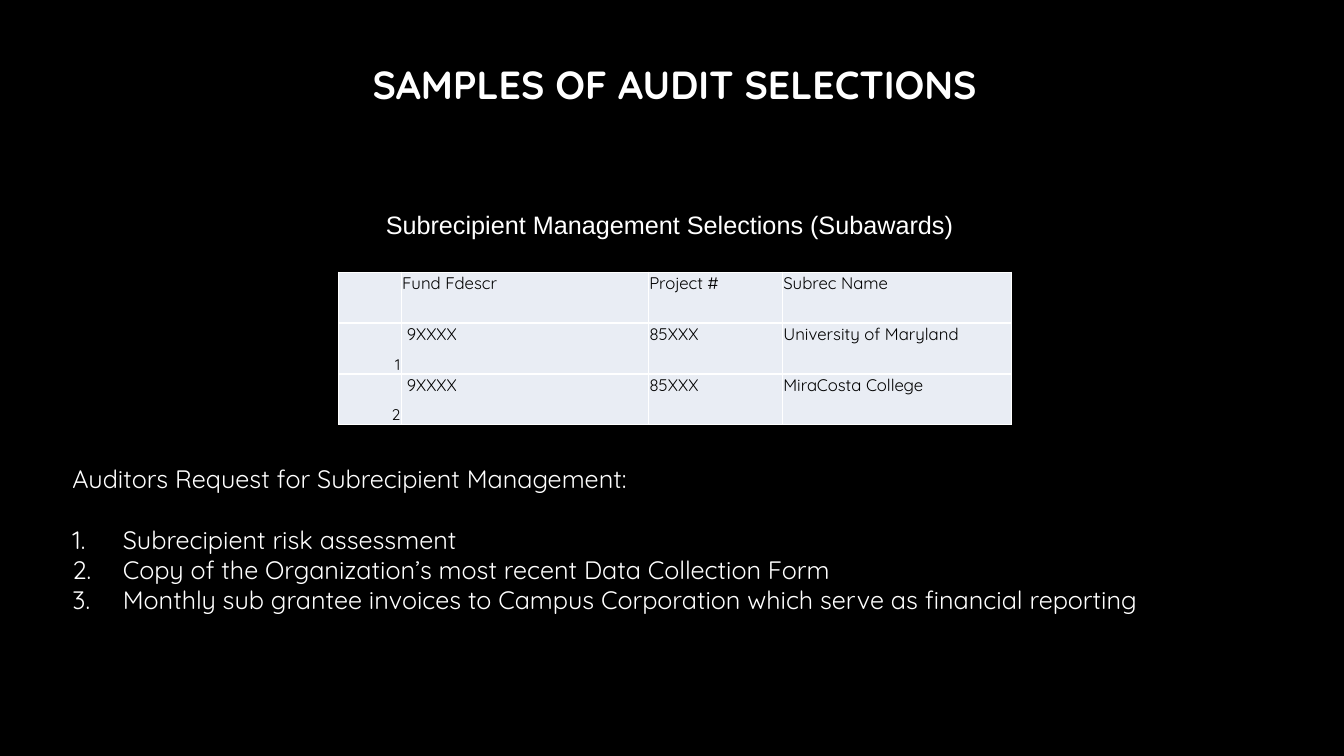
"""Build the slide of audit selections for subrecipient management."""
from dataclasses import dataclass

from lxml import etree
from pptx import Presentation
from pptx.dml.color import RGBColor
from pptx.enum.text import MSO_ANCHOR, PP_ALIGN
from pptx.oxml.ns import qn
from pptx.slide import Slide
from pptx.table import _Cell
from pptx.text.text import _Paragraph
from pptx.util import Inches, Pt

LEFT, CENTER, RIGHT = PP_ALIGN.LEFT, PP_ALIGN.CENTER, PP_ALIGN.RIGHT
TOP, BOTTOM = MSO_ANCHOR.TOP, MSO_ANCHOR.BOTTOM
COLORS = {"page": "000000", "light": "FFFFFF", "cell": "E9EDF4", "dark": "000000"}
FONT = "Quicksand"


@dataclass
class TextBlock:
    """A text box; lines after the first are numbered."""
    left: float
    top: float
    width: float
    height: float
    lines: list[str]
    size: int = 18
    font: str = FONT
    bold: bool = False
    align: PP_ALIGN = LEFT


TITLE = TextBlock(2.14, 0.55, 9.1, 0.88, ["SAMPLES OF AUDIT SELECTIONS"],
                  size=28, bold=True, align=CENTER)
SUBTITLE = TextBlock(0, 2.03, 13.28, 0.39,
                     ["Subrecipient Management Selections (Subawards)"],
                     font="Arial", align=CENTER)
REQUESTS = TextBlock(0.62, 4.55, 12.51, 2.36, [
    "Auditors Request for Subrecipient Management:",
    "Subrecipient risk assessment",
    "Copy of the Organization’s most recent Data Collection Form",
    "Monthly sub grantee invoices to Campus Corporation which serve as financial reporting",
])

COLUMN_WIDTHS = [0.62, 2.45, 1.33, 2.27]
ROW_HEIGHT = 0.505
ROWS = [
    ["", "Fund Fdescr", "Project #", "Subrec Name"],
    ["1", " 9XXXX", "85XXX", "University of Maryland"],
    ["2", " 9XXXX", "85XXX", "MiraCosta College"],
]


def rgb(name: str) -> RGBColor:
    """Return a named colour."""
    return RGBColor.from_string(COLORS[name])


def style(para: _Paragraph, size: int, color: str, font: str = FONT,
          bold: bool = False) -> None:
    """Format every run of a paragraph."""
    for span in para.runs:
        span.font.size = Pt(size)
        span.font.name = font
        span.font.bold = bold
        span.font.color.rgb = rgb(color)


def number(para: _Paragraph) -> None:
    """Give a paragraph a hanging automatic number."""
    props = para._p.get_or_add_pPr()
    props.set("marL", str(Inches(0.5)))
    props.set("indent", str(Inches(-0.5)))
    etree.SubElement(props, qn("a:buFont"), typeface="+mj-lt")
    etree.SubElement(props, qn("a:buAutoNum"), type="arabicPeriod")


def add_text(page: Slide, block: TextBlock) -> _Paragraph:
    """Draw a text block and return its first paragraph."""
    box = page.shapes.add_textbox(Inches(block.left), Inches(block.top),
                                  Inches(block.width), Inches(block.height))
    frame = box.text_frame
    frame.word_wrap = True
    frame.text = "\n".join(block.lines)
    for index, para in enumerate(frame.paragraphs):
        if index:
            number(para)
        if index == 1:
            para.space_before = Pt(21.5)
        para.alignment = block.align
        style(para, block.size, "light", block.font, block.bold)
    return frame.paragraphs[0]


def add_glow_shadow(para: _Paragraph) -> None:
    """Put a soft grey shadow behind the letters of a paragraph."""
    props = para.runs[0].font._element
    effects = etree.Element(qn("a:effectLst"))
    shadow = etree.SubElement(effects, qn("a:outerShdw"), blurRad="38100",
                              dist="38100", dir="2700000", algn="tl")
    color = etree.SubElement(shadow, qn("a:srgbClr"), val="808080")
    etree.SubElement(color, qn("a:alpha"), val="43000")
    props.find(qn("a:solidFill")).addnext(effects)


def add_borders(cell: _Cell) -> None:
    """Draw thin white lines around a cell."""
    props = cell._tc.get_or_add_tcPr()
    for index, side in enumerate(("lnL", "lnR", "lnT", "lnB")):
        line = etree.Element(qn(f"a:{side}"), w=str(Pt(1)))
        fill = etree.SubElement(line, qn("a:solidFill"))
        etree.SubElement(fill, qn("a:srgbClr"), val=COLORS["light"])
        props.insert(index, line)


def add_selections(page: Slide) -> None:
    """Draw the table of selected subawards."""
    table = page.shapes.add_table(
        len(ROWS), len(COLUMN_WIDTHS), Inches(3.36), Inches(2.7),
        Inches(sum(COLUMN_WIDTHS)), Inches(ROW_HEIGHT * len(ROWS))).table
    table.first_row = table.horz_banding = False
    for column, width in zip(table.columns, COLUMN_WIDTHS):
        column.width = Inches(width)
    for row, texts in zip(table.rows, ROWS):
        row.height = Inches(ROW_HEIGHT)
        for index, (cell, text) in enumerate(zip(row.cells, texts)):
            is_number = index == 0
            cell.text = text
            cell.margin_left = cell.margin_right = cell.margin_top = Inches(0.01)
            cell.margin_bottom = 0
            cell.vertical_anchor = BOTTOM if is_number else TOP
            cell.fill.solid()
            cell.fill.fore_color.rgb = rgb("cell")
            add_borders(cell)
            para = cell.text_frame.paragraphs[0]
            para.alignment = RIGHT if is_number else LEFT
            style(para, 11 if is_number else 12, "dark")


def main() -> None:
    """Build and save the deck."""
    deck = Presentation()
    deck.slide_width, deck.slide_height = Inches(13.33), Inches(7.5)
    page = deck.slides.add_slide(deck.slide_layouts[6])
    page.background.fill.solid()
    page.background.fill.fore_color.rgb = rgb("page")
    add_glow_shadow(add_text(page, TITLE))
    add_text(page, SUBTITLE)
    add_text(page, REQUESTS)
    add_selections(page)
    deck.save("out.pptx")


if __name__ == "__main__":
    main()
